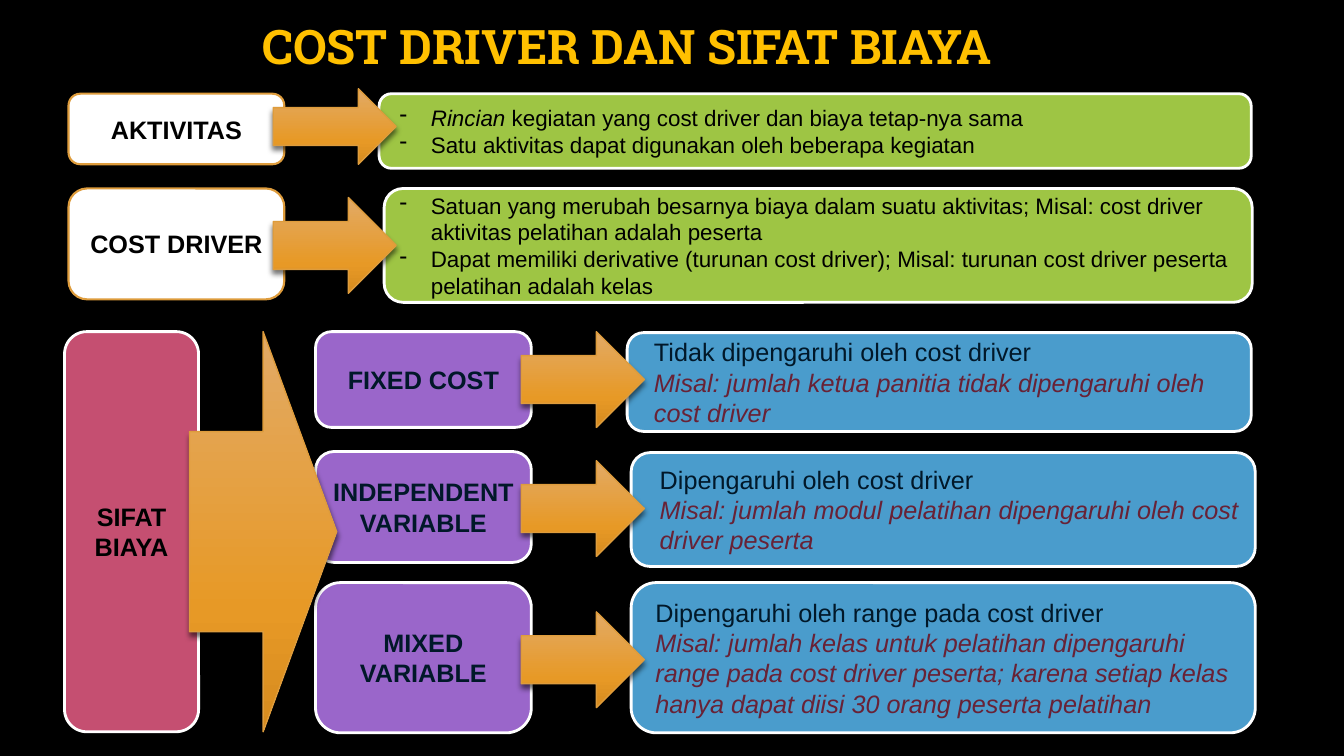
import copy
import lxml.etree
import pptx
import pptx.dml.color
import pptx.enum.shapes
import pptx.enum.text
import pptx.oxml
import pptx.oxml.ns
import pptx.util

Inches, Pt = pptx.util.Inches, pptx.util.Pt
KIND = pptx.enum.shapes.MSO_SHAPE
ALIGN = pptx.enum.text.PP_ALIGN
MIDDLE = pptx.enum.text.MSO_ANCHOR.MIDDLE
qn = pptx.oxml.ns.qn

COLORS = {
    "back": "000000", "title": "FFC000", "black": "000000", "white": "FFFFFF",
    "navy": "011829", "wine": "682236", "rose": "C54F71", "green": "9EC544",
    "violet": "9A66CA", "blue": "4A9CCC", "edge": "DE9C3C",
    "light": "E2AA66", "amber": "E79926", "dark": "D68B1F",
}


def color(name):
    return pptx.dml.color.RGBColor.from_string(COLORS[name])


class Deck:
    font = "Arial"

    def __init__(self):
        self.show = pptx.Presentation()
        self.show.slide_width = Inches(13.33)
        self.show.slide_height = Inches(7.5)
        self.slide = self.show.slides.add_slide(self.show.slide_layouts[5])
        fill = self.slide.background.fill
        fill.solid()
        fill.fore_color.rgb = color("back")

    def run(self, para, text, size, ink, bold=False, italic=False, font=None):
        run = para.add_run()
        run.text = text
        run.font.name = font or self.font
        run.font.size = Pt(size)
        run.font.bold, run.font.italic = bold, italic
        run.font.color.rgb = color(ink)

    def title(self, text, left, top, width, height):
        shape = self.slide.shapes.title
        shape.left, shape.top = Inches(left), Inches(top)
        shape.width, shape.height = Inches(width), Inches(height)
        frame = shape.text_frame
        frame.word_wrap = True
        frame.auto_size = pptx.enum.text.MSO_AUTO_SIZE.NONE
        frame.vertical_anchor = MIDDLE
        para = frame.paragraphs[0]
        para.alignment = ALIGN.CENTER
        para.line_spacing = 0.9
        self.run(para, text, 34, "title", bold=True, font="Roboto Slab")

    def shape(self, kind, place, edge, weight):
        shape = self.slide.shapes.add_shape(kind, *map(Inches, place))
        shape.shadow.inherit = False
        shape.line.color.rgb = color(edge)
        shape.line.width = Pt(weight)
        return shape

    def box(self, place, fill, edge="white", weight=2):
        shape = self.shape(KIND.ROUNDED_RECTANGLE, place, edge, weight)
        shape.fill.solid()
        shape.fill.fore_color.rgb = color(fill)
        shape.text_frame.word_wrap = True
        shape.text_frame.vertical_anchor = MIDDLE
        return shape.text_frame

    def label(self, text, place, fill, ink, **line):
        para = self.box(place, fill, **line).paragraphs[0]
        para.alignment = ALIGN.CENTER
        self.run(para, text, 18, ink, bold=True)

    def list(self, place, fill, rows, size, level, margin, hang=0):
        """Each row holds runs of (text, ink, italic)."""
        frame = self.box(place, fill)
        for i, row in enumerate(rows):
            para = frame.add_paragraph() if i else frame.paragraphs[0]
            para.alignment = ALIGN.LEFT
            para.level = level
            props = para._p.get_or_add_pPr()
            props.set("marL", str(Inches(margin)))
            props.set("indent", str(-Inches(hang)))
            if hang:
                lxml.etree.SubElement(props, qn("a:buChar")).set("char", "-")
            for text, ink, italic in row:
                self.run(para, text, size, ink, italic=italic)

    def arrow(self, *place):
        shape = self.shape(KIND.RIGHT_ARROW, place, "edge", 1)
        fill = shape.fill
        fill.gradient()
        fill.gradient_angle = 270
        props = shape._element.spPr
        stops = props.find(".//" + qn("a:gsLst"))
        stops.append(copy.deepcopy(stops[-1]))
        tints = (("light", 0), ("amber", 0.69), ("dark", 1))
        for stop, (name, spot) in zip(fill.gradient_stops, tints):
            stop.color.rgb = color(name)
            stop.position = spot
        # Soft shadow below
        glow = lxml.etree.SubElement(
            props.find(qn("a:effectLst")), qn("a:outerShdw"),
            blurRad=str(Pt(4)), dist=str(Pt(3)), dir="5400000", rotWithShape="0")
        tone = lxml.etree.SubElement(glow, qn("a:srgbClr"), val=COLORS["black"])
        lxml.etree.SubElement(tone, qn("a:alpha"), val="54000")


def main():
    deck = Deck()
    deck.title("COST DRIVER DAN SIFAT BIAYA", 0.56, 0.14, 11.32, 0.7)

    # Activity and cost driver: label, list, arrow
    terms = [
        ("AKTIVITAS", 0.93, 0.7, (3.76, 0.93, 8.65, 0.74), 0.38, (0.88, 0.75), [
            [("Rincian", "black", True),
             (" kegiatan yang cost driver dan biaya tetap-nya sama", "black", False)],
            [("Satu aktivitas dapat digunakan oleh beberapa kegiatan", "black", False)],
        ]),
        ("COST DRIVER", 1.87, 1.1, (3.81, 1.87, 8.61, 1.13), 0.31, (1.96, 0.95), [
            [("Satuan yang merubah besarnya biaya dalam suatu aktivitas; Misal: "
              "cost driver aktivitas pelatihan adalah peserta", "black", False)],
            [("Dapat memiliki derivative (turunan cost driver); Misal: turunan "
              "cost driver peserta pelatihan adalah kelas", "black", False)],
        ]),
    ]
    for name, top, height, place, margin, (tip, tall), rows in terms:
        deck.label(name, (0.68, top, 2.14, height), "white", "black",
                   edge="edge", weight=1.5)
        deck.list(place, "green", rows, 16, 1, margin, hang=0.31)
        deck.arrow(2.71, tip, 1.22, tall)

    # Cost types: label, meaning with example
    types = [
        ("FIXED COST", 3.29, 0.95, (6.22, 3.3, 6.19, 0.98), 0.12, 3.29,
         "Tidak dipengaruhi oleh cost driver",
         "Misal: jumlah ketua panitia tidak dipengaruhi oleh cost driver"),
        ("INDEPENDENT VARIABLE", 4.48, 1.1, (6.26, 4.49, 6.19, 1.13), 0.13, 4.57,
         "Dipengaruhi oleh cost driver",
         "Misal: jumlah modul pelatihan dipengaruhi oleh cost driver peserta"),
        ("MIXED VARIABLE", 5.78, 1.49, (6.26, 5.78, 6.19, 1.49), 0.07, 6.07,
         "Dipengaruhi oleh range pada cost driver",
         "Misal: jumlah kelas untuk pelatihan dipengaruhi range pada cost driver "
         "peserta; karena setiap kelas hanya dapat diisi 30 orang peserta pelatihan"),
    ]
    for name, top, height, place, margin, tip, sense, case in types:
        deck.label(name, (3.13, top, 2.14, height), "violet", "navy")
        rows = [[(sense, "navy", False)], [(case, "wine", True)]]
        deck.list(place, "blue", rows, 18, 2, margin)
        deck.arrow(5.17, tip, 1.22, 0.95)

    # Cost nature, pointing at its types
    deck.label("SIFAT BIAYA", (0.64, 3.29, 1.33, 3.97), "rose", "black")
    deck.arrow(1.88, 3.29, 1.46, 3.97)

    deck.show.save("out.pptx")


if __name__ == "__main__":
    main()
